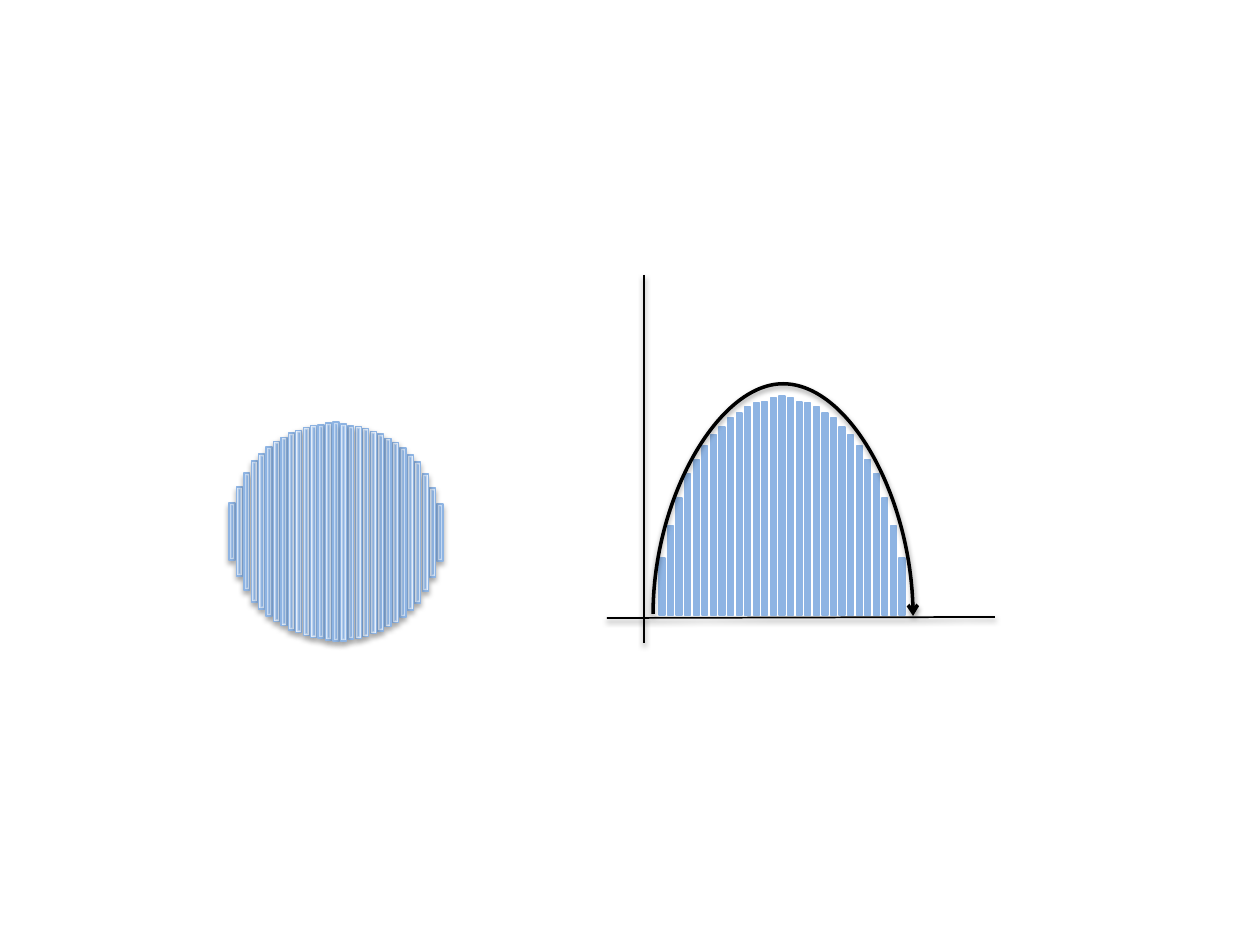
from lxml import etree
from pptx import Presentation
from pptx import util as u
from pptx.dml.color import RGBColor
from pptx.enum import shapes
from pptx.oxml import ns, parse_xml

SCALE = 914400 / 126  # EMU per px
BLUE, BLACK, WHITE = "8EB4E3", "000000", "FFFFFF"
BAR_W = 6
HEIGHTS = [57, 89, 117, 141, 155, 169, 180, 188, 197, 202, 208, 212, 213, 217, 219]
LAST = 2 * len(HEIGHTS) - 2  # index of the rightmost bar
BAR_SHADOW = dict(alpha=35000, dist=1.8)
LINE_SHADOW = dict(alpha=38000, dist=1.6)


def px(n):
    return u.Emu(round(n * SCALE))


def color(value):
    return RGBColor.from_string(value)


def set_line(s, value, width):
    s.line.color.rgb = color(value)
    s.line.width = u.Pt(width)


def add_shadow(s, alpha, dist):
    """Soft black shadow straight below the shape."""
    pr = s._element.spPr
    effects = pr.find(ns.qn("a:effectLst"))
    if effects is None:
        effects = etree.SubElement(pr, ns.qn("a:effectLst"))
    effects.append(parse_xml(
        f'<a:outerShdw {ns.nsdecls("a")} blurRad="{u.Pt(3.1)}" dist="{u.Pt(dist)}" '
        f'dir="5400000" rotWithShape="0"><a:srgbClr val="{BLACK}">'
        f'<a:alpha val="{alpha}"/></a:srgbClr></a:outerShdw>'))


def set_gradient(s, inner, outer):
    """Gradient running from the middle of the shape to its edges."""
    stops = "".join(f'<a:gs pos="{pos}"><a:srgbClr val="{c}"/></a:gs>'
                    for pos, c in ((0, inner), (100000, outer)))
    s._element.spPr.insert(2, parse_xml(
        f'<a:gradFill {ns.nsdecls("a")} rotWithShape="1"><a:gsLst>{stops}</a:gsLst>'
        '<a:path path="shape"><a:fillToRect l="50000" t="50000" r="50000" b="50000"/>'
        '</a:path></a:gradFill>'))


def add_bar(group, x, y, h):
    s = group.shapes.add_shape(shapes.MSO_SHAPE.RECTANGLE, px(x), px(y), px(BAR_W), px(h))
    s.shadow.inherit = False
    set_line(s, BLUE, 0.75)
    return s


def bar_columns(width):
    """Yield x, height and side: left half inwards, then right half inwards."""
    pitch = (width - BAR_W) / LAST
    for i, h in enumerate(HEIGHTS):
        yield i * pitch, h, False
    for i, h in enumerate(HEIGHTS[:-1]):
        yield (LAST - i) * pitch, h, True


def add_line(group, kind, x1, y1, x2, y2, width):
    s = group.shapes.add_connector(kind, px(x1), px(y1), px(x2), px(y2))
    set_line(s, BLACK, width)
    add_shadow(s, **LINE_SHADOW)
    return s


def sliced_circle(slide, x, y, w, h):
    """Circle cut into vertical strips."""
    group = slide.shapes.add_group_shape()
    for dx, bar_h, right in bar_columns(w):
        middle = y + h / 2 + right
        s = add_bar(group, x + dx, middle - bar_h / 2, bar_h)
        s.rotation = 180 if right else 0
        set_gradient(s, BLUE, WHITE)
        add_shadow(s, **BAR_SHADOW)


def add_arch(group, x, y, w, h):
    """Arched arrow, a quarter-turned curved connector; its ends differ by 2 px."""
    drop = 2
    cx, cy = x + w / 2, y + h
    s = add_line(group, shapes.MSO_CONNECTOR.CURVE, cx + drop / 2, cy - w / 2,
                 cx - drop / 2, cy + w / 2, 2)
    pr = s._element.spPr
    pr.find(ns.qn("a:xfrm")).set("rot", str(270 * 60000))
    guides = pr.find(ns.qn("a:prstGeom")).find(ns.qn("a:avLst"))
    bulge = round(-(h - drop / 2) / drop * 100000)
    etree.SubElement(guides, ns.qn("a:gd"), name="adj1", fmla=f"val {bulge}")
    etree.SubElement(pr.find(ns.qn("a:ln")), ns.qn("a:tailEnd"), type="arrow")


def bar_graph(slide, x, y, w, h):
    """Axes, the strips standing on the base line, and the arch over them."""
    group = slide.shapes.add_group_shape()
    straight = shapes.MSO_CONNECTOR.STRAIGHT
    add_line(group, straight, x + 37, y, x + 37, y + h, 1)
    add_line(group, straight, x, y + 343, x + w, y + 342, 1)
    base = y + 340
    for dx, bar_h, right in bar_columns(246):
        s = add_bar(group, x + 52 + dx, base - bar_h, bar_h)
        s.rotation = 180 if right else 0
        s.fill.solid()
        s.fill.fore_color.rgb = color(BLUE)
    add_arch(group, x + 46, y + 107, 260, 233)


def main():
    prs = Presentation()
    prs.slide_width, prs.slide_height = px(1260), px(945)
    slide = prs.slides.add_slide(prs.slide_layouts[6])
    sliced_circle(slide, 229, 422, 214, 219)
    bar_graph(slide, 607, 275, 388, 368)
    prs.save("out.pptx")


if __name__ == "__main__":
    main()
